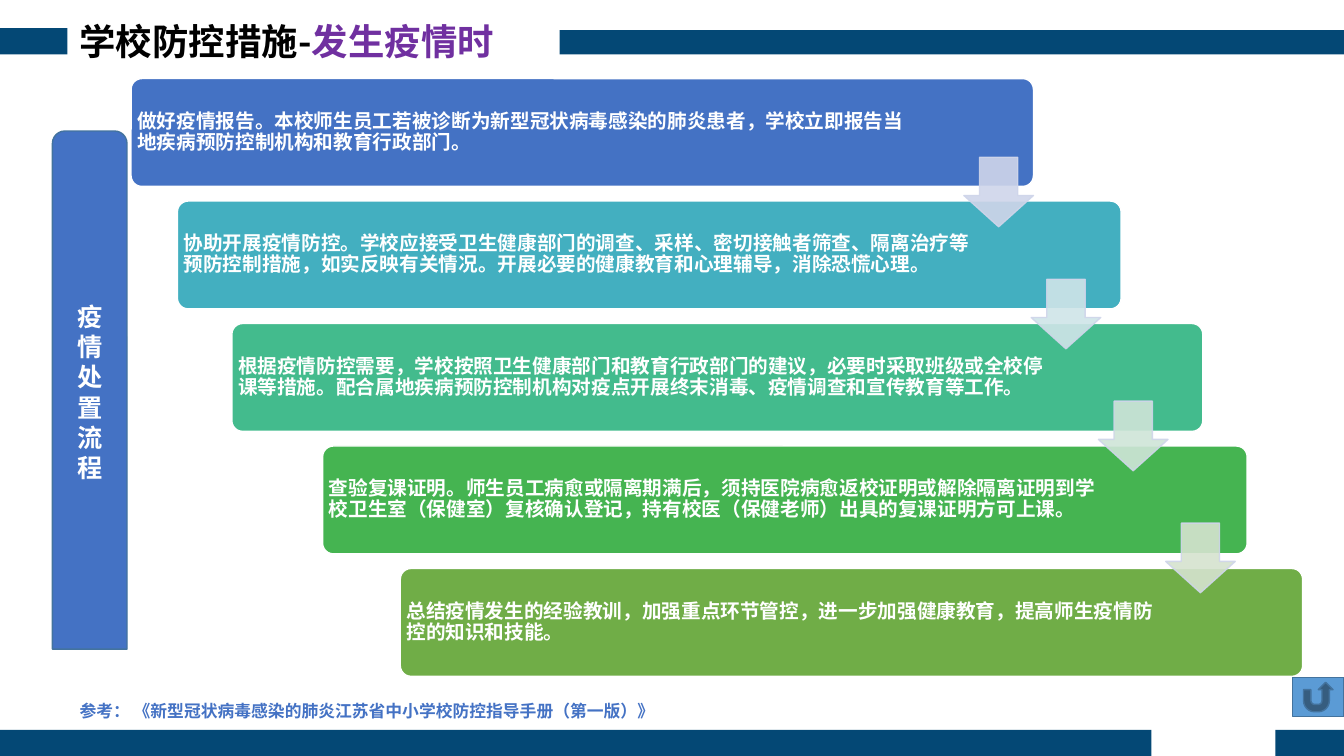
from lxml import etree
from pptx import Presentation
from pptx.dml.color import RGBColor
from pptx.enum.shapes import MSO_SHAPE
from pptx.enum.text import MSO_ANCHOR, PP_ALIGN
from pptx.oxml.ns import qn
from pptx.util import Inches, Pt

RECT = MSO_SHAPE.RECTANGLE
ROUNDED = MSO_SHAPE.ROUNDED_RECTANGLE
TOP_ROUNDED = MSO_SHAPE.ROUND_2_SAME_RECTANGLE
DOWN_ARROW = MSO_SHAPE.DOWN_ARROW
RETURN_BUTTON = MSO_SHAPE.ACTION_BUTTON_RETURN
MIDDLE, TOP = MSO_ANCHOR.MIDDLE, MSO_ANCHOR.TOP
LEFT, CENTER = PP_ALIGN.LEFT, PP_ALIGN.CENTER

WIDTH, HEIGHT = 13.33, 7.5
FONT = "Noto Sans CJK SC"
NAVY, BLUE, EDGE, WHITE = "044875", "4472C4", "43739E", "FFFFFF"
ARROW_EDGE = "CFD5EA"

CARD_HEIGHT, CARD_PITCH = 1.07, 1.215
ARROW_SIZE, ARROW_STEP = 0.69, (0.667, 1.21)

# left, width, text width, fill, wording
STEPS = [
    (1.3, 8.95, 7.74, BLUE,
     "做好疫情报告。本校师生员工若被诊断为新型冠状病毒感染的肺炎患者，学校立即报告当地疾病预防控制机构和教育行政部门。"),
    (1.76, 9.36, 7.94, "43AFC0",
     "协助开展疫情防控。学校应接受卫生健康部门的调查、采样、密切接触者筛查、隔离治疗等预防控制措施，如实反映有关情况。开展必要的健康教育和心理辅导，消除恐慌心理。"),
    (2.3, 9.63, 8.16, "43BB8D",
     "根据疫情防控需要，学校按照卫生健康部门和教育行政部门的建议，必要时采取班级或全校停课等措施。配合属地疾病预防控制机构对疫点开展终末消毒、疫情调查和宣传教育等工作。"),
    (3.2, 9.17, 7.77, "45B451",
     "查验复课证明。师生员工病愈或隔离期满后，须持医院病愈返校证明或解除隔离证明到学校卫生室（保健室）复核确认登记，持有校医（保健老师）出具的复课证明方可上课。"),
    (3.97, 8.95, 7.59, "70AD47",
     "总结疫情发生的经验教训，加强重点环节管控，进一步加强健康教育，提高师生疫情防控的知识和技能。"),
]
ARROW_FILLS = ["CFD5EA", "CFE5E8", "CFE5D8", "D5E3CF"]


def rgb(color):
    return RGBColor.from_string(color)


def add_block(slide, kind, box, fill, edge=None, adjust=()):
    block = slide.shapes.add_shape(kind, *map(Inches, box))
    block.shadow.inherit = False
    block.fill.solid()
    block.fill.fore_color.rgb = rgb(fill)
    if edge:
        block.line.color.rgb = rgb(edge)
        block.line.width = Pt(1)
    else:
        block.line.fill.background()
    for index, value in enumerate(adjust):
        block.adjustments[index] = value
    return block


def write(shape, runs, size, anchor=TOP, align=LEFT, spacing=None):
    """Fill the shape with one bold paragraph of (wording, colour) runs."""
    frame = shape.text_frame
    frame.word_wrap = True
    frame.vertical_anchor = anchor
    paragraph = frame.paragraphs[0]
    paragraph.alignment = align
    if spacing:
        paragraph.line_spacing = spacing
    for wording, color in runs:
        run = paragraph.add_run()
        run.text = wording
        run.font.size, run.font.bold, run.font.name = Pt(size), True, FONT
        run.font.color.rgb = rgb(color)
        east_asian = etree.SubElement(run.font._element, qn("a:ea"))
        east_asian.set("typeface", FONT)


def make_translucent(shape, percent):
    """Set the opacity of the shape's fill and line."""
    for color in shape._element.spPr.iter(qn("a:srgbClr")):
        etree.SubElement(color, qn("a:alpha")).set("val", str(percent * 1000))


def add_header(slide, left, top, width, height):
    for bar in ((0, 0.28, 0.67, 0.26), (5.55, 0.3, WIDTH - 5.55, 0.24)):
        add_block(slide, RECT, bar, NAVY)
    title = slide.shapes.add_textbox(*map(Inches, (left, top, width, height)))
    write(title, [("学校防控措施-", "000000"), ("发生疫情时", "7030A0")], 26, spacing=0.9)


def add_footer(slide, left, top, width, height):
    bar_height = 0.26
    for bar_left, bar_width in ((0, 11.42), (12.65, WIDTH - 12.65)):
        add_block(slide, RECT, (bar_left, HEIGHT - bar_height, bar_width, bar_height), NAVY)
    reference = slide.shapes.add_textbox(*map(Inches, (left, top, width, height)))
    write(reference, [("参考： 《新型冠状病毒感染的肺炎江苏省中小学校防控指导手册（第一版）》", BLUE)], 12)
    add_block(slide, RETURN_BUTTON, (WIDTH - 0.51, 6.72, 0.51, 0.39), "5B9BD5", EDGE)


def add_card(slide, box, text_width, fill, wording):
    card = add_block(slide, ROUNDED, box, fill, WHITE, [0.1])
    write(card, [(wording, WHITE)], 14, MIDDLE, spacing=0.9)
    frame = card.text_frame
    # The rounded corners already inset the text by 0.03 inch
    frame.margin_left = Inches(0.03)
    frame.margin_right = Inches(box[2] - text_width + 0.03)
    frame.margin_top = frame.margin_bottom = Inches(0.03)


def add_staircase(slide, top, arrow_left, arrow_top):
    for row, (left, width, text_width, fill, wording) in enumerate(STEPS):
        box = (left, top + row * CARD_PITCH, width, CARD_HEIGHT)
        add_card(slide, box, text_width, fill, wording)
    step_x, step_y = ARROW_STEP
    for row, fill in enumerate(ARROW_FILLS):
        box = (arrow_left + row * step_x, arrow_top + row * step_y, ARROW_SIZE, ARROW_SIZE)
        arrow = add_block(slide, DOWN_ARROW, box, fill, ARROW_EDGE)
        # First the head length, then the shaft width
        arrow.adjustments[0], arrow.adjustments[1] = 0.55, 0.45
        make_translucent(arrow, 90)


def add_process_label(slide, box):
    label = add_block(slide, TOP_ROUNDED, box, BLUE, EDGE)
    write(label, [("疫情处置流程", WHITE)], 18, MIDDLE, CENTER)


def main():
    deck = Presentation()
    deck.slide_width, deck.slide_height = Inches(WIDTH), Inches(HEIGHT)
    slide = deck.slides.add_slide(deck.slide_layouts[6])
    add_header(slide, 0.69, 0.19, 4.91, 0.55)
    add_staircase(slide, 0.78, 9.56, 1.56)
    add_process_label(slide, (0.52, 1.3, 0.74, 5.14))
    add_footer(slide, 0.69, 6.9, 12.12, 0.3)
    deck.save("out.pptx")


if __name__ == "__main__":
    main()
